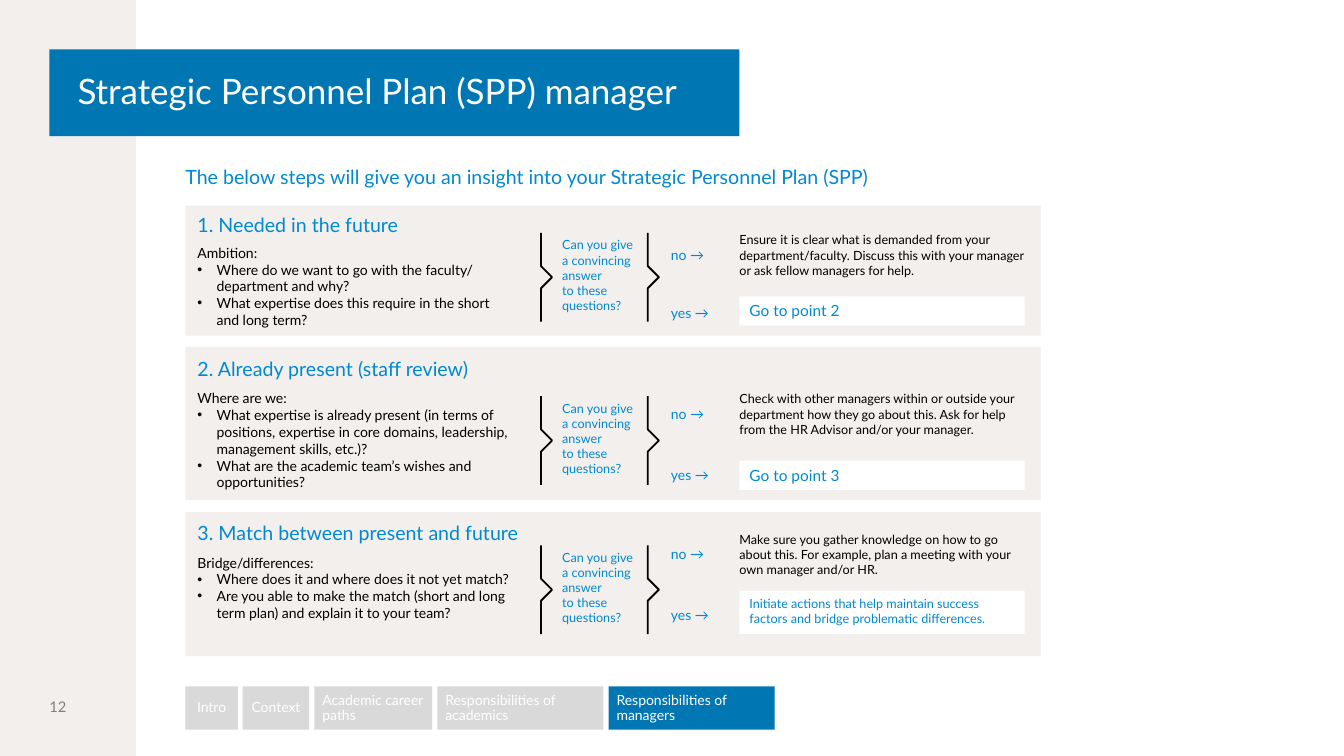
from dataclasses import dataclass

from lxml import etree
from pptx import Presentation
from pptx import util as u
from pptx.dml.color import RGBColor
from pptx.enum import shapes, text
from pptx.oxml.ns import qn
from pptx.util import Inches


@dataclass(frozen=True)
class Theme:
    font: str = "Lato"
    sand: str = "F2EFED"
    deep_blue: str = "0077B3"
    blue: str = "0089CF"
    white: str = "FFFFFF"
    black: str = "000000"
    grey: str = "7F7F7F"
    tab_grey: str = "D9D9D9"
    title: float = 25
    heading: float = 14
    link: float = 11
    number: float = 10.5
    body: float = 10
    small: float = 9


@dataclass(frozen=True)
class Step:
    panel: tuple  # top, height
    text_top: float
    text_width: float
    heading: str
    lead: str
    lead_spacing: float
    questions: tuple
    chevron_top: float
    no_top: float
    yes_top: float
    advice: str
    result: str
    result_box: tuple  # top, height
    result_size: float


THEME = Theme()
MIDDLE = text.MSO_ANCHOR.MIDDLE
LEFT, PANEL_WIDTH = 1.84, 8.49
ANSWER_LEFT, ANSWER_WIDTH = 7.34, 2.83
QUESTION = "Can you give\na convincing answer\nto these questions?"

STEPS = [
    Step((2.04, 1.29), 2.04, 3.31, "1. Needed in the future", "Ambition:", 12,
         ("Where do we want to go with the faculty/\ndepartment and why?",
          "What expertise does this require in the short and long term?"),
         2.31, 2.38, 2.95,
         "Ensure it is clear what is demanded from your department/faculty. "
         "Discuss this with your manager or ask fellow managers for help.",
         "Go to point 2", (2.94, 0.29), THEME.link),
    Step((3.44, 1.52), 3.47, 3.42, "2. Already present (staff review)", "Where are we:", 13,
         ("What expertise is already present (in terms of positions, expertise in core "
          "domains, leadership, management skills, etc.)?",
          "What are the academic team’s wishes and opportunities?"),
         3.93, 3.96, 4.56,
         "Check with other managers within or outside your department how they go about "
         "this. Ask for help from the HR Advisor and/or your manager.",
         "Go to point 3", (4.57, 0.29), THEME.link),
    Step((5.08, 1.43), 5.1, 3.45, "3. Match between present and future", "Bridge/differences:", 13,
         ("Where does it and where does it not yet match?",
          "Are you able to make the match (short and long term plan) and explain it to your team?"),
         5.41, 5.35, 5.95,
         "Make sure you gather knowledge on how to go about this. For example, plan a "
         "meeting with your own manager and/or HR.",
         "Initiate actions that help maintain success\nfactors and bridge problematic differences.",
         (5.86, 0.43), THEME.small),
]

# label, width, centred
TABS = [
    ("Intro", 0.52, True),
    ("Context", 0.66, True),
    ("Academic career paths", 1.17, False),
    ("Responsibilities of academics", 1.65, False),
    ("Responsibilities of managers", 1.65, False),
]


def rgb(colour):
    return RGBColor.from_string(colour)


def add_block(page, left, top, width, height, fill):
    block = page.shapes.add_shape(shapes.MSO_SHAPE.RECTANGLE, Inches(left), Inches(top),
                                  Inches(width), Inches(height))
    block.shadow.inherit = False
    block.fill.solid()
    block.fill.fore_color.rgb = rgb(fill)
    block.line.fill.background()
    return block


def add_textbox(page, left, top, width, height):
    return page.shapes.add_textbox(Inches(left), Inches(top), Inches(width), Inches(height))


def set_frame(box, insets=(0, 0, 0, 0), anchor=text.MSO_ANCHOR.TOP):
    frame = box.text_frame
    frame.word_wrap = True
    frame.vertical_anchor = anchor
    frame.margin_left, frame.margin_top, frame.margin_right, frame.margin_bottom = map(Inches, insets)
    return frame


def write(para, words, size, colour, spacing=None, centred=False):
    para.text = words
    para.alignment = text.PP_ALIGN.CENTER if centred else text.PP_ALIGN.LEFT
    if spacing:
        para.line_spacing = spacing
    for span in para.runs:
        span.font.name = THEME.font
        span.font.size = u.Pt(size)
        span.font.color.rgb = rgb(colour)
    # Line breaks carry the type size of their paragraph
    for line_break in para._p.findall(qn("a:br")):
        etree.SubElement(line_break, qn("a:rPr"), sz=str(round(size * 100)))


def add_bullet(para):
    properties = para._p.get_or_add_pPr()
    properties.set("marL", str(Inches(0.19)))
    properties.set("indent", str(Inches(-0.19)))
    etree.SubElement(properties, qn("a:buFont"), typeface="Arial")
    etree.SubElement(properties, qn("a:buChar"), char="•")


def add_chevron(page, left, top):
    points = [(0, 0.33), (0.11, 0.44), (0, 0.55), (0, 0.88)]
    outline = page.shapes.build_freeform(Inches(left), Inches(top))
    outline.add_line_segments([(Inches(left + x), Inches(top + y)) for x, y in points], close=False)
    chevron = outline.convert_to_shape()
    chevron.shadow.inherit = False
    chevron.fill.background()
    chevron.line.color.rgb = rgb(THEME.black)
    chevron.line.width = u.Pt(1.3)


def add_step(page, step):
    add_block(page, LEFT, step.panel[0], PANEL_WIDTH, step.panel[1], THEME.sand)

    # Heading and questions
    box = add_textbox(page, LEFT, step.text_top, step.text_width, step.panel[1])
    frame = set_frame(box, (0.12,) * 4)
    heading = frame.paragraphs[0]
    write(heading, step.heading, THEME.heading, THEME.blue, u.Pt(13))
    heading.space_after = u.Pt(6)
    write(frame.add_paragraph(), step.lead, THEME.body, THEME.black, u.Pt(step.lead_spacing))
    for question in step.questions:
        para = frame.add_paragraph()
        write(para, question, THEME.body, THEME.black, u.Pt(12))
        add_bullet(para)

    # Check between two chevrons
    for left in (5.37, 6.43):
        add_chevron(page, left, step.chevron_top)
    box = add_textbox(page, 5.58, step.chevron_top - 0.05, 0.79, 0.94)
    write(set_frame(box, anchor=MIDDLE).paragraphs[0], QUESTION, THEME.small, THEME.blue)

    # Answers
    for label, top in (("no →", step.no_top), ("yes →", step.yes_top)):
        box = add_textbox(page, 6.66, top, 0.6, 0.3)
        write(set_frame(box, (0, 0.05, 0, 0.05), MIDDLE).paragraphs[0], label, THEME.body, THEME.blue)
    box = add_textbox(page, ANSWER_LEFT, step.no_top - 0.08, ANSWER_WIDTH, 0.58)
    write(set_frame(box).paragraphs[0], step.advice, THEME.small, THEME.black, u.Pt(11))
    top, height = step.result_box
    box = add_block(page, ANSWER_LEFT, top, ANSWER_WIDTH, height, THEME.white)
    spacing = u.Pt(11) if step.result_size == THEME.small else None
    write(set_frame(box, (0.1, 0.05, 0.1, 0.05)).paragraphs[0], step.result,
          step.result_size, THEME.blue, spacing)


def add_tabs(page):
    left = LEFT
    for label, width, centred in TABS:
        fill = THEME.deep_blue if label == TABS[-1][0] else THEME.tab_grey
        tab = add_block(page, left, 6.81, width, 0.43, fill)
        write(set_frame(tab, (0.08,) * 4, MIDDLE).paragraphs[0], label,
              THEME.body, THEME.white, 0.9, centred)
        left += width + 0.05


def main():
    deck = Presentation()
    deck.slide_width, deck.slide_height = Inches(13.34), Inches(7.5)
    page = deck.slides.add_slide(deck.slide_layouts[6])

    # Side band, title, page number and introduction
    add_block(page, 0, 0, 1.35, 7.5, THEME.sand)
    title = add_block(page, 0.49, 0.49, 6.85, 0.86, THEME.deep_blue)
    write(set_frame(title, (0.28, 0.24, 0.24, 0.24), MIDDLE).paragraphs[0],
          "Strategic Personnel Plan (SPP) manager", THEME.title, THEME.white, 0.9)
    number = add_textbox(page, 0.49, 6.52, 0.86, 0.98)
    write(set_frame(number, anchor=MIDDLE).paragraphs[0], "12", THEME.number, THEME.grey)
    intro = add_textbox(page, LEFT, 1.64, PANEL_WIDTH, 0.24)
    write(set_frame(intro).paragraphs[0],
          "The below steps will give you an insight into your Strategic Personnel Plan (SPP)",
          THEME.heading, THEME.blue)

    # Steps and navigation
    for step in STEPS:
        add_step(page, step)
    add_tabs(page)
    deck.save("out.pptx")


if __name__ == "__main__":
    main()
